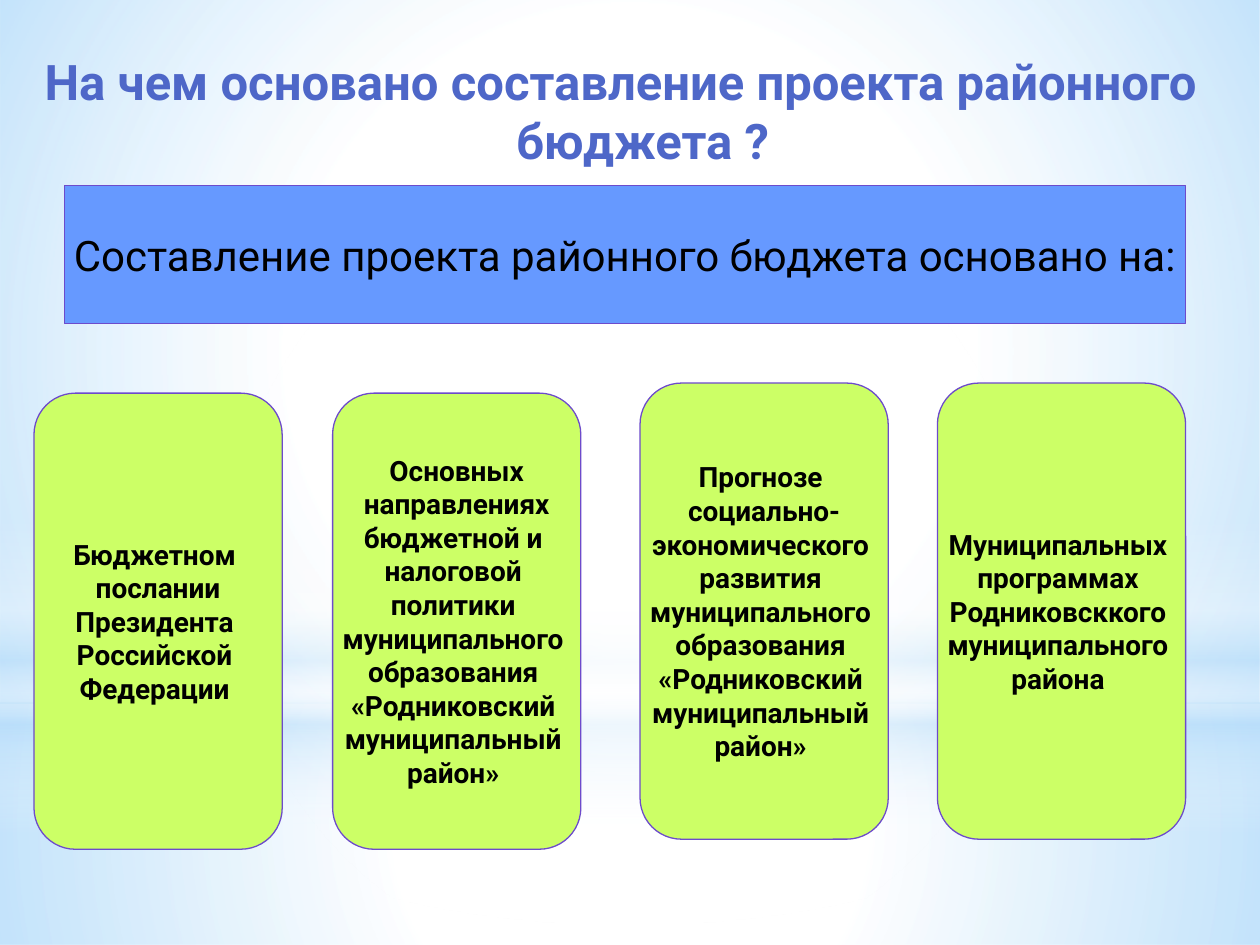
"""Build a slide showing what the district budget draft is based on."""
from lxml import etree
from pptx import Presentation
from pptx.dml.color import RGBColor
from pptx.enum.shapes import MSO_SHAPE
from pptx.enum.text import MSO_ANCHOR, MSO_AUTO_SIZE, PP_ALIGN
from pptx.oxml.ns import qn
from pptx.util import Inches, Pt

RECT, OVAL, ROUNDED = MSO_SHAPE.RECTANGLE, MSO_SHAPE.OVAL, MSO_SHAPE.ROUNDED_RECTANGLE
CENTER, TOP, MIDDLE = PP_ALIGN.CENTER, MSO_ANCHOR.TOP, MSO_ANCHOR.MIDDLE
NO_AUTOFIT = MSO_AUTO_SIZE.NONE

FONT = "Roboto"
COLORS = {"white": "FFFFFF", "sky": "B4DCFA", "title": "4E67C8", "banner": "6699FF",
          "card": "CCFF66", "outline": "6D4BCB", "text": "000000"}

TITLE = "На чем основано составление проекта районного бюджета ?"
BANNER = "Составление проекта районного бюджета основано на:"
CARDS = [
    (0.27, 3.12, ["Бюджетном ", "послании", "Президента ", "Российской ", "Федерации "]),
    (2.64, 3.12, ["Основных", " направлениях ", "бюджетной и ", "налоговой ", "политики ",
                  "муниципального ", "образования ", "«Родниковский ", "муниципальный ",
                  "район» "]),
    (5.08, 3.04, ["Прогнозе ", "социально-", "экономического ", "развития ",
                  "муниципального ", "образования ", "«Родниковский ", "муниципальный ",
                  "район» "]),
    (7.44, 3.04, ["Муниципальных ", "программах ", "Родниковсккого ", "муниципального ",
                  "района "]),
]
CARD_SIZE = (1.97, 3.62)

# Each stop: position %, colour, opacity %.
BACKDROP = [
    (RECT, (0, 5.58, 10, 1.92), True,
     [(0, "white", 91), (37, "white", 76), (100, "sky", 79)]),
    (RECT, (0, 0, 10, 5.58), True,
     [(0, "white", 89), (48, "white", 62), (100, "sky", 79)]),
    (RECT, (0, 4.12, 10, 2.5), False,
     [(0, "white", 0), (29, "white", 30), (45, "sky", 40), (55, "white", 26),
      (65, "sky", 60), (100, "white", 0)]),
    (OVAL, (0, 1.75, 10, 5.58), True, [(0, "white", 100), (56, "white", 0)]),
]


def rgb(name):
    return RGBColor.from_string(COLORS[name])


def add_panel(slide, kind, box):
    panel = slide.shapes.add_shape(kind, *map(Inches, box))
    panel.shadow.inherit = False
    return panel


def add_backdrop(slide, kind, box, radial, stops):
    panel = add_panel(slide, kind, box)
    panel.line.fill.background()
    panel.fill.background()
    properties = panel._element.spPr
    gradient = etree.Element(qn("a:gradFill"), rotWithShape="1")
    stop_list = etree.SubElement(gradient, qn("a:gsLst"))
    for position, color, opacity in stops:
        stop = etree.SubElement(stop_list, qn("a:gs"), pos=str(position * 1000))
        shade = etree.SubElement(stop, qn("a:srgbClr"), val=COLORS[color])
        etree.SubElement(shade, qn("a:alpha"), val=str(opacity * 1000))
    if radial:
        circle = etree.SubElement(gradient, qn("a:path"))
        circle.set("path", "circle")
        etree.SubElement(circle, qn("a:fillToRect"),
                         {side: "50000" for side in "ltrb"})
    else:
        etree.SubElement(gradient, qn("a:lin"), ang="5400000", scaled="0")
    properties.replace(properties.find(qn("a:noFill")), gradient)


def write(frame, lines, size, color, bold):
    for index, line in enumerate(lines):
        paragraph = frame.add_paragraph() if index else frame.paragraphs[0]
        paragraph.alignment = CENTER
        run = paragraph.add_run()
        run.text = line
        run.font.name, run.font.size, run.font.bold = FONT, Pt(size), bold
        run.font.color.rgb = rgb(color)


def add_box(slide, kind, box, fill, lines, size, bold):
    panel = add_panel(slide, kind, box)
    panel.fill.solid()
    panel.fill.fore_color.rgb = rgb(fill)
    panel.line.color.rgb = rgb("outline")
    panel.line.width = Pt(0.75)
    frame = panel.text_frame
    frame.word_wrap = False
    frame.vertical_anchor = MIDDLE
    write(frame, lines, size, "text", bold)


def place_title(slide):
    title = slide.shapes.title
    title.left, title.top, title.width, title.height = map(Inches, (0.2, 0.36, 9.45, 1.25))
    frame = title.text_frame
    frame.auto_size = NO_AUTOFIT
    frame.word_wrap = True
    frame.vertical_anchor = TOP
    write(frame, [TITLE], 28, "title", True)
    indent = Inches(0.35)
    properties = frame.paragraphs[0]._p.get_or_add_pPr()
    properties.set("marL", str(indent))
    properties.set("indent", str(-indent))
    slide.shapes._spTree.append(title._element)


def main():
    deck = Presentation()
    deck.slide_width, deck.slide_height = Inches(10), Inches(7.5)
    slide = deck.slides.add_slide(deck.slide_layouts[5])
    slide.background.fill.solid()
    slide.background.fill.fore_color.rgb = rgb("white")
    for layer in BACKDROP:
        add_backdrop(slide, *layer)
    place_title(slide)
    add_box(slide, RECT, (0.51, 1.47, 8.9, 1.1), "banner", [BANNER], 24, False)
    for left, top, lines in CARDS:
        add_box(slide, ROUNDED, (left, top, *CARD_SIZE), "card", lines, 16, True)
    deck.save("out.pptx")


if __name__ == "__main__":
    main()
